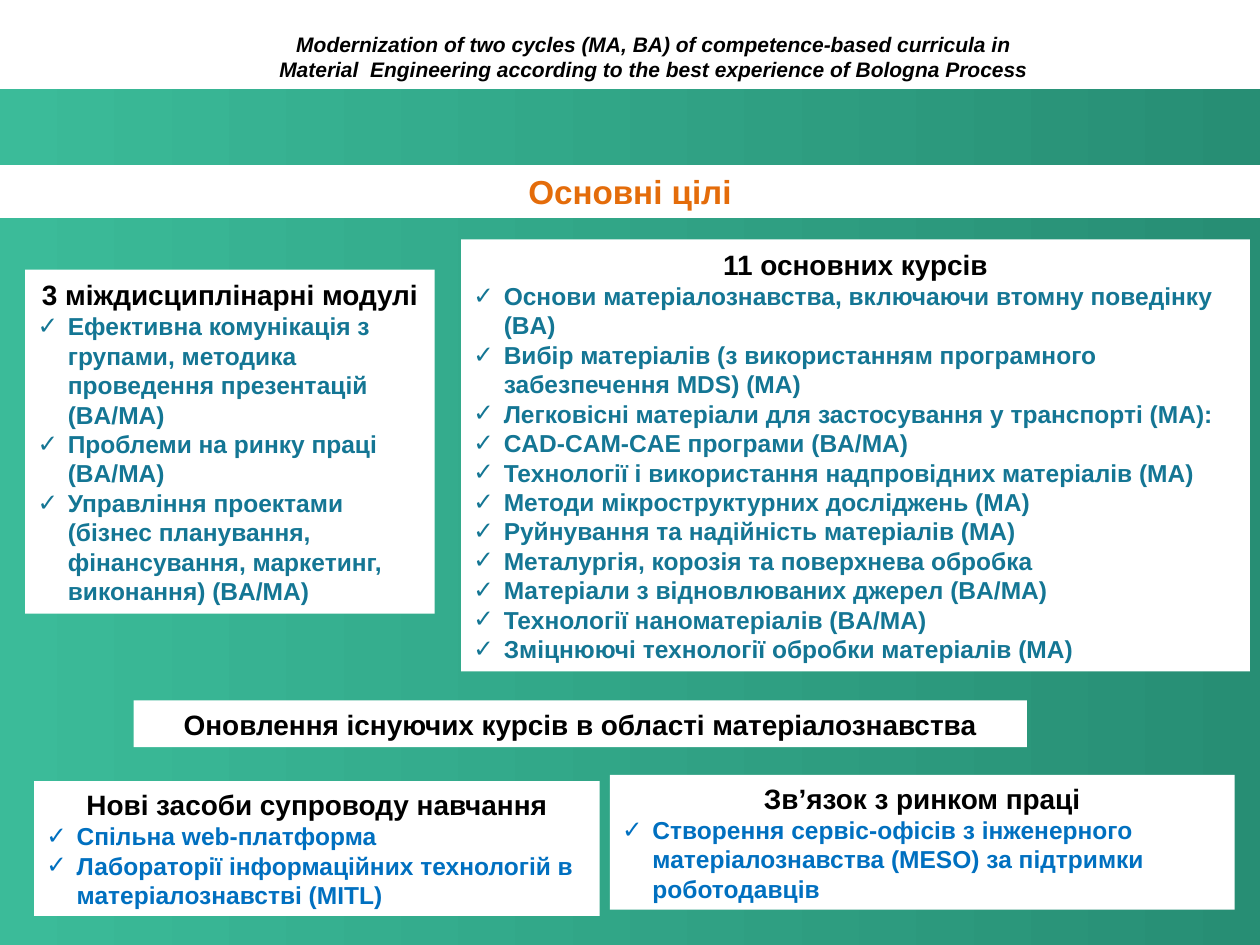
from dataclasses import dataclass

from lxml.etree import SubElement
from pptx import Presentation
from pptx.dml.color import RGBColor
from pptx.enum.shapes import MSO_SHAPE
from pptx.enum.text import MSO_ANCHOR, PP_ALIGN
from pptx.oxml.ns import qn
from pptx.util import Inches, Pt


@dataclass(frozen=True)
class Theme:
    font: str = "Arial"
    black: str = "000000"
    white: str = "FFFFFF"
    orange: str = "E46C0A"
    teal: str = "147694"
    blue: str = "0070C0"
    gradient: tuple = ("3BBB99", "278E74")
    project_size: int = 12
    bullet_size: int = 14
    heading_size: int = 16
    title_size: int = 19


THEME = Theme()
SLIDE_WIDTH, SLIDE_HEIGHT = 10, 7.5
HEADER_BOTTOM = 0.71
BULLET_INDENT = 0.24

PROJECT = (
    "Modernization of two cycles (MA, BA) of competence-based curricula in "
    "Material  Engineering according to the best experience of Bologna Process"
)
TITLE = "Основні цілі"

# Each panel: position (left, top, width, height), heading, bullet colour, bullets
PANELS = [
    ((1.06, 5.56, 7.09, 0.37), "Оновлення існуючих курсів в області матеріалознавства",
     THEME.teal, []),
    ((0.2, 2.14, 3.25, 2.73), "3 міждисциплінарні модулі", THEME.teal, [
        "Ефективна комунікація з групами, методика проведення презентацій (BA/MA)",
        "Проблеми на ринку праці (BA/MA)",
        "Управління проектами (бізнес планування, фінансування, маркетинг, "
        "виконання) (BA/MA)",
    ]),
    ((3.66, 1.9, 6.26, 3.43), "11 основних курсів", THEME.teal, [
        "Основи матеріалознавства, включаючи втомну поведінку (BA)",
        "Вибір матеріалів (з використанням програмного забезпечення MDS) (MA)",
        "Легковісні матеріали для застосування у транспорті (MA):",
        "CAD-CAM-CAE програми (BA/MA)",
        "Технології і використання надпровідних матеріалів (MA)",
        "Методи мікроструктурних досліджень (MA)",
        "Руйнування та надійність матеріалів (MA)",
        "Металургія, корозія та поверхнева обробка",
        "Матеріали з відновлюваних джерел (BA/MA)",
        "Технології наноматеріалів (BA/MA)",
        "Зміцнюючі технології обробки матеріалів (MA)",
    ]),
    ((0.27, 6.2, 4.49, 1.07), "Нові засоби супроводу навчання", THEME.blue, [
        "Спільна web-платформа",
        "Лабораторії інформаційних технологій в матеріалознавстві (MITL)",
    ]),
    ((4.84, 6.15, 4.96, 1.07), "Зв’язок з ринком праці", THEME.blue, [
        "Створення сервіс-офісів з інженерного матеріалознавства (MESO) "
        "за підтримки роботодавців",
    ]),
]


def add_rectangle(slide, position):
    shape = slide.shapes.add_shape(MSO_SHAPE.RECTANGLE, *map(Inches, position))
    shape.shadow.inherit = False
    shape.line.fill.background()
    return shape


def add_backdrop(slide):
    height = SLIDE_HEIGHT - HEADER_BOTTOM
    fill = add_rectangle(slide, (0, HEADER_BOTTOM, SLIDE_WIDTH, height)).fill
    fill.gradient()
    fill.gradient_angle = 0
    for position, (stop, color) in enumerate(zip(fill.gradient_stops, THEME.gradient)):
        stop.position = position
        stop.color.rgb = RGBColor.from_string(color)


def add_white_box(slide, position, anchor=MSO_ANCHOR.MIDDLE):
    shape = add_rectangle(slide, position)
    shape.fill.solid()
    shape.fill.fore_color.rgb = RGBColor.from_string(THEME.white)
    shape.text_frame.word_wrap = True
    shape.text_frame.vertical_anchor = anchor
    return shape.text_frame


def write(paragraph, text, *, size=THEME.heading_size, color=THEME.black,
          italic=False, bullet=False):
    """Write bold text, centred unless it is a check-marked list item."""
    paragraph.alignment = PP_ALIGN.LEFT if bullet else PP_ALIGN.CENTER
    if bullet:
        properties = paragraph._p.get_or_add_pPr()
        properties.set("marL", str(Inches(BULLET_INDENT)))
        properties.set("indent", str(-Inches(BULLET_INDENT)))
        SubElement(properties, qn("a:buFont"), typeface=THEME.font)
        SubElement(properties, qn("a:buChar"), char="✓")
    run = paragraph.add_run()
    run.text = text
    font = run.font
    font.name, font.size, font.bold, font.italic = THEME.font, Pt(size), True, italic
    font.color.rgb = RGBColor.from_string(color)


def add_panel(slide, position, heading, color, bullets):
    frame = add_white_box(slide, position)
    write(frame.paragraphs[0], heading)
    for text in bullets:
        write(frame.add_paragraph(), text, size=THEME.bullet_size, color=color,
              bullet=True)


def main():
    presentation = Presentation()
    presentation.slide_width = Inches(SLIDE_WIDTH)
    presentation.slide_height = Inches(SLIDE_HEIGHT)
    slide = presentation.slides.add_slide(presentation.slide_layouts[6])

    add_backdrop(slide)
    header = slide.shapes.add_textbox(*map(Inches, (2.01, 0.2, 6.36, 0.51))).text_frame
    header.word_wrap = True
    write(header.paragraphs[0], PROJECT, size=THEME.project_size, italic=True)

    title = add_white_box(slide, (0, 1.31, SLIDE_WIDTH, 0.42), MSO_ANCHOR.TOP)
    write(title.paragraphs[0], TITLE, size=THEME.title_size, color=THEME.orange)
    for panel in PANELS:
        add_panel(slide, *panel)

    presentation.save("out.pptx")


if __name__ == "__main__":
    main()
